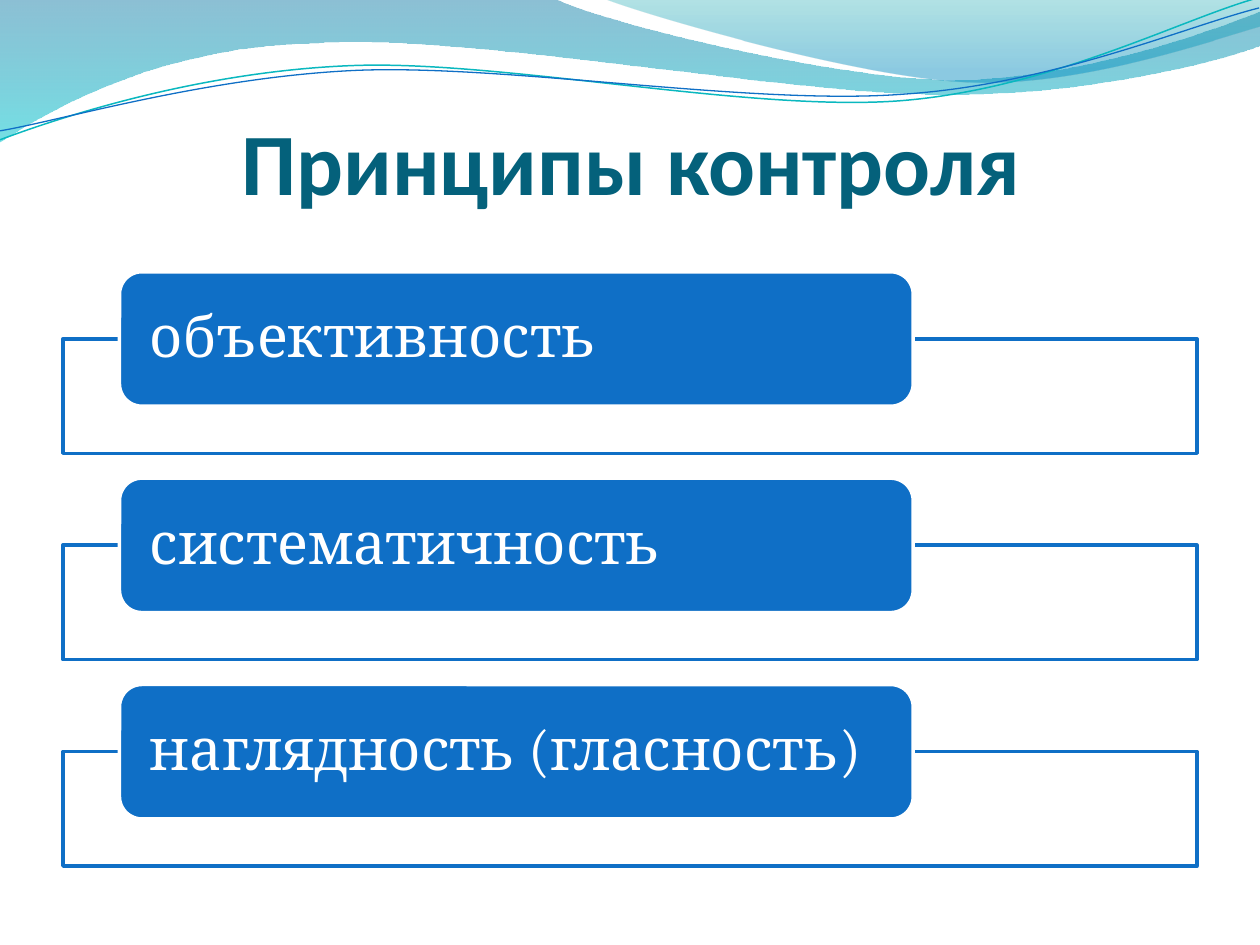
from dataclasses import dataclass

from lxml.etree import SubElement
from pptx import Presentation
from pptx.dml.color import RGBColor as RGB
from pptx.enum.shapes import MSO_SHAPE as Shape
from pptx.enum.text import MSO_ANCHOR as Anchor, PP_ALIGN as Align
from pptx.oxml.ns import qn
from pptx.util import Cm, Pt


@dataclass(frozen=True)
class Theme:
    title: RGB = RGB(0x04, 0x61, 0x7B)
    accent: RGB = RGB(0x0F, 0x6F, 0xC6)
    teal: RGB = RGB(0x0A, 0xB8, 0xBF)
    white: RGB = RGB(0xFF, 0xFF, 0xFF)
    back_wave: tuple = ((0, RGB(0x00, 0x74, 0xA1), 45), (1, RGB(0x00, 0xC6, 0xCF), 55))
    front_wave: tuple = ((0, RGB(0x00, 0xA1, 0xA9), 30), (0.8, RGB(0x00, 0x8B, 0xBF), 45))
    title_font: str = "Calibri"
    body_font: str = "Cambria"
    title_size: Pt = Pt(50)
    body_size: Pt = Pt(33)
    border: Pt = Pt(2)


@dataclass(frozen=True)
class Outline:
    bounds: tuple
    segments: tuple


THEME = Theme()

BACK_WAVE = Outline((-0.03, -0.03, 25.45, 2.9), (
    (0, 0),
    (11.21, 0),
    (12.12, 0.46, 16.9, 1.63, 19.28, 1.63),
    (21.7, 1.63, 24.36, 0.69, 25.43, 0.26),
    (25.45, 0.94),
    (25, 1.15, 22.13, 1.96, 18.98, 1.93),
    (15.83, 1.93, 9.73, 0.74, 6.56, 0.89),
    (3.31, 0.94, 1.2, 2.14, 0, 2.9),
))
FRONT_WAVE = Outline((12.17, -0.03, 13.23, 1.78), (
    (0, 0),
    (0.76, 0.31, 5.15, 1.6, 7.36, 1.68),
    (9.57, 1.78, 12.24, 0.84, 13.23, 0.56),
    (13.23, 0.03),
))
TEAL_LINE = Outline((-0.05, 0.56, 25.45, 1.8), (
    (0, 1.66),
    (1.24, 1.26, 4.06, 0.48, 7.11, 0.5),
    (10.11, 0.51, 15.06, 1.81, 18.14, 1.73),
    (21.18, 1.64, 23.91, 0.35, 25.45, 0),
))
BLUE_LINE = Outline((-0.05, 0.76, 25.48, 1.47), (
    (0, 1.28),
    (1.21, 1.14, 4.22, 0.39, 7.25, 0.4),
    (10.3, 0.42, 15.18, 1.49, 18.24, 1.4),
    (21.27, 1.34, 23.99, 0.3, 25.48, 0),
))
LINE_ROTATION = 357.3

PRINCIPLES = ["объективность", "систематичность", "наглядность (гласность)"]
FIRST_TOP, ROW_STEP = 5.48, 4.16


def bend(line, segment):
    line.tag_name = None


def add_outline(slide, outline, close):
    start, *rest = outline.segments
    builder = slide.shapes.build_freeform(*map(Cm, start))
    builder.add_line_segments([tuple(map(Cm, seg[-2:])) for seg in rest], close=close)
    s = builder.convert_to_shape()
    s.left, s.top, s.width, s.height = map(Cm, outline.bounds)
    s.shadow.inherit = False
    path = s._element.spPr.find(".//" + qn("a:path"))
    path.set("w", str(s.width))
    path.set("h", str(s.height))
    for line, seg in zip(path.findall(qn("a:lnTo")), rest):
        if len(seg) == 6:
            curve = SubElement(path, qn("a:cubicBezTo"))
            for x, y in zip(seg[::2], seg[1::2]):
                pt = SubElement(curve, qn("a:pt"))
                pt.set("x", str(Cm(x)))
                pt.set("y", str(Cm(y)))
            path.replace(line, curve)
    return s


def set_alpha(color, percent):
    SubElement(color, qn("a:alpha")).set("val", str(percent * 1000))


def add_wave(slide, outline, stops):
    s = add_outline(slide, outline, True)
    s.line.fill.background()
    s.fill.gradient()
    s.fill.gradient_angle = 270
    for stop, (position, color, _) in zip(s.fill.gradient_stops, stops):
        stop.position = position
        stop.color.rgb = color
    colors = s._element.spPr.findall(".//" + qn("a:srgbClr"))
    for color, (_, _, alpha) in zip(colors, stops):
        set_alpha(color, alpha)


def add_curve(slide, outline, color, width):
    s = add_outline(slide, outline, False)
    s.rotation = LINE_ROTATION
    s.fill.background()
    s.line.color.rgb = color
    s.line.width = width


def add_box(slide, kind, bounds, fill, line):
    s = slide.shapes.add_shape(kind, *map(Cm, bounds))
    s.shadow.inherit = False
    s.fill.solid()
    s.fill.fore_color.rgb = fill
    s.line.color.rgb = line
    s.line.width = THEME.border
    return s


def set_text(s, text, font, size, color, align, anchor, margins, bold=False):
    tf = s.text_frame
    tf.word_wrap = True
    tf.vertical_anchor = anchor
    tf.margin_left = tf.margin_right = Cm(margins[0])
    tf.margin_top, tf.margin_bottom = Cm(margins[1]), 0
    p = tf.paragraphs[0]
    p.text = text
    p.alignment = align
    p.font.name = font
    p.font.size = size
    p.font.bold = bold
    p.font.color.rgb = color
    return p


def add_title(slide, text):
    s = slide.shapes.add_textbox(Cm(1.3), Cm(1.12), Cm(22.86), Cm(3.18))
    set_text(s, text, THEME.title_font, THEME.title_size, THEME.title,
             Align.CENTER, Anchor.BOTTOM, (0, 0.13), bold=True)


def add_principle(slide, text, top):
    frame = add_box(slide, Shape.RECTANGLE, (1.27, top + 1.35, 22.86, 2.31),
                    THEME.white, THEME.accent)
    set_alpha(frame._element.spPr.find(qn("a:solidFill"))[0], 90)
    label = add_box(slide, Shape.ROUNDED_RECTANGLE, (2.41, top, 16, 2.71),
                    THEME.accent, THEME.white)
    p = set_text(label, text, THEME.body_font, THEME.body_size, THEME.white,
                 Align.LEFT, Anchor.MIDDLE, (0.48, 0))
    p.line_spacing = 0.9


def main():
    prs = Presentation()
    prs.slide_width, prs.slide_height = Cm(25.4), Cm(19.05)
    slide = prs.slides.add_slide(prs.slide_layouts[6])
    add_wave(slide, BACK_WAVE, THEME.back_wave)
    add_wave(slide, FRONT_WAVE, THEME.front_wave)
    add_curve(slide, TEAL_LINE, THEME.teal, Pt(0.85))
    add_curve(slide, BLUE_LINE, THEME.accent, Pt(0.75))
    add_title(slide, "Принципы контроля")
    for i, text in enumerate(PRINCIPLES):
        add_principle(slide, text, FIRST_TOP + i * ROW_STEP)
    prs.save("out.pptx")


if __name__ == "__main__":
    main()
